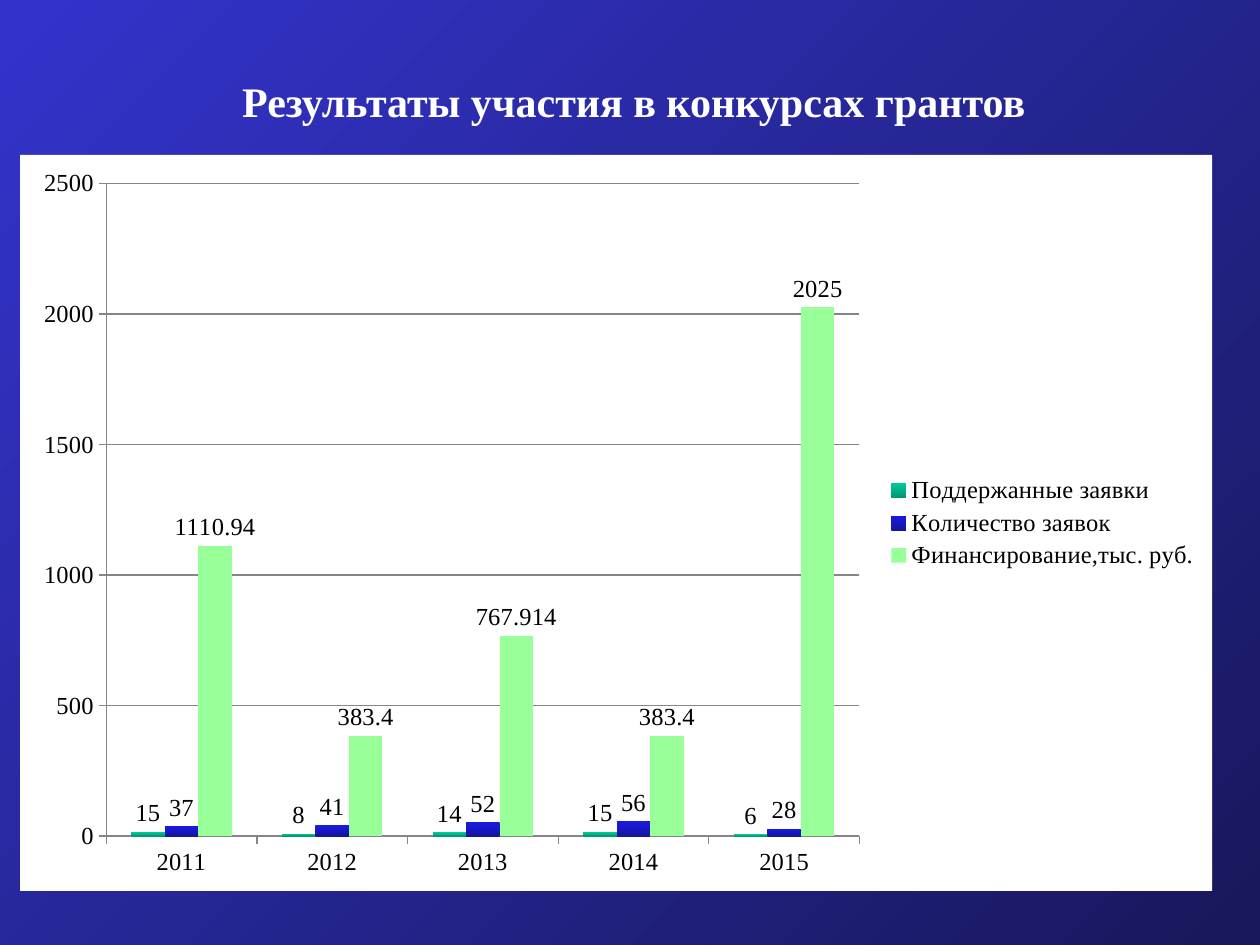
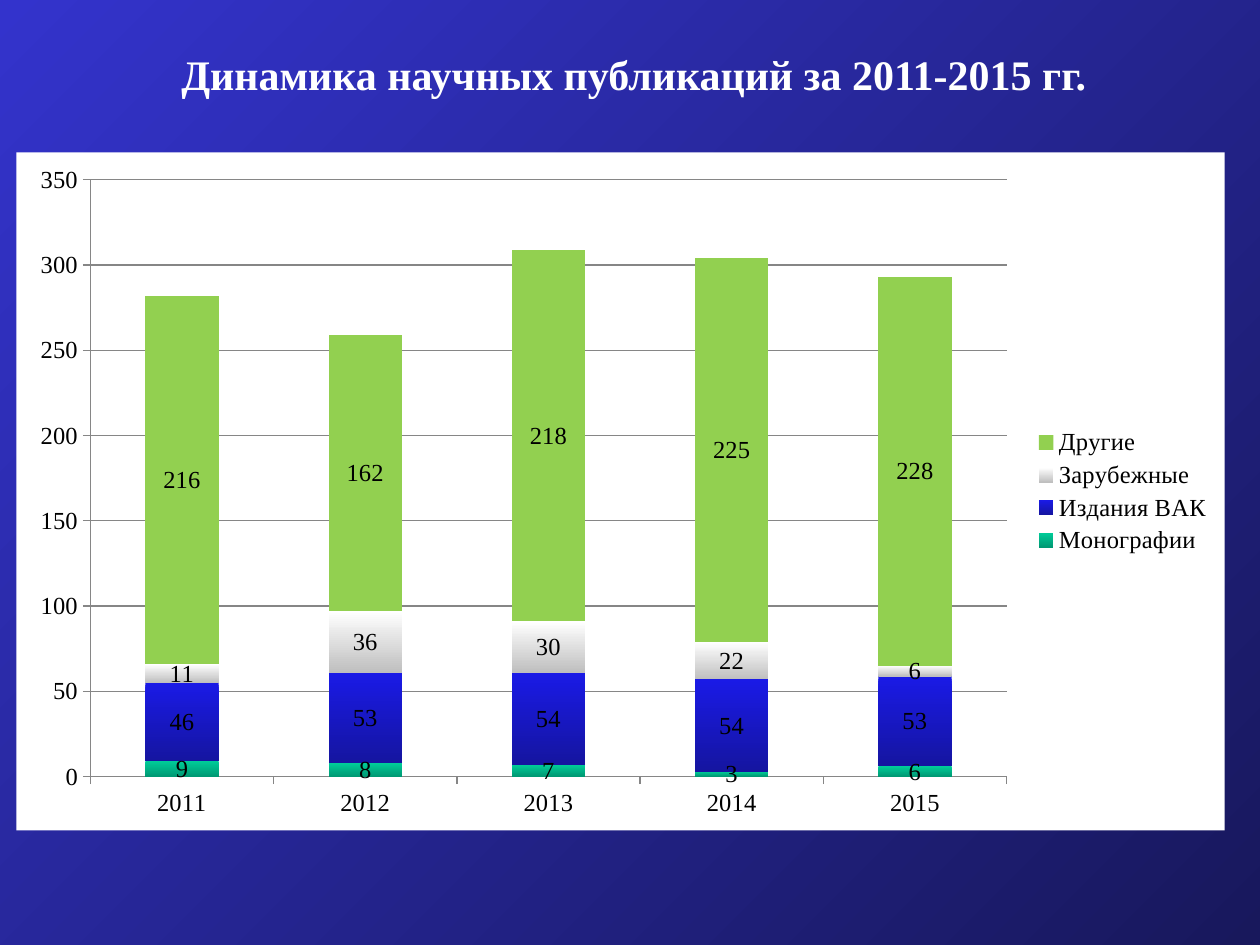
from lxml import etree
from pptx import Presentation
from pptx import util as u
from pptx.chart.data import CategoryChartData
from pptx.dml.color import RGBColor
from pptx.enum import chart as ch, text
from pptx.oxml.ns import qn

THEME = {
    "font": "Times New Roman",
    "title_size": u.Pt(24),
    "chart_size": u.Pt(14),
    "title": "FFFFFF",
    "text": "000000",
    "panel": "FFFFFF",
    "grid": "868686",
    "background": ("3333CC", "18185C"),
    "teal": ("00CC99", "009973"),
    "blue": ("1A1AE6", "1515A0"),
    "grey": ("FFFFFF", "BFBFBF"),
    "mint": ("99FF99",),
    "lime": ("92D050",),
}
YEARS = ["2011", "2012", "2013", "2014", "2015"]

SLIDES = [
    {
        "title": "Результаты участия в конкурсах грантов",
        "title_box": (0.78, 0.37, 8.5, 0.86),
        "chart_box": (0.16, 1.23, 9.46, 5.84),
        "kind": ch.XL_CHART_TYPE.COLUMN_CLUSTERED,
        "label_position": ch.XL_LABEL_POSITION.OUTSIDE_END,
        "overlap": 0,
        "series": [
            ("Поддержанные заявки", "teal", (15, 8, 14, 15, 6)),
            ("Количество заявок", "blue", (37, 41, 52, 56, 28)),
            ("Финансирование,тыс. руб.", "mint", (1110.94, 383.4, 767.914, 383.4, 2025)),
        ],
    },
    {
        "title": "Динамика научных публикаций за 2011-2015 гг.",
        "title_box": (0.78, 0.16, 8.5, 0.85),
        "chart_box": (0.13, 1.21, 9.59, 5.38),
        "kind": ch.XL_CHART_TYPE.COLUMN_STACKED,
        "label_position": ch.XL_LABEL_POSITION.CENTER,
        "overlap": 100,
        "series": [
            ("Монографии", "teal", (9, 8, 7, 3, 6)),
            ("Издания ВАК", "blue", (46, 53, 54, 54, 53)),
            ("Зарубежные", "grey", (11, 36, 30, 22, 6)),
            ("Другие", "lime", (216, 162, 218, 225, 228)),
        ],
    },
]


def set_all(target, values):
    for name, value in values.items():
        setattr(target, name, value)


def paint(fill, colours, angle=270):
    if len(colours) == 1:
        fill.solid()
        fill.fore_color.rgb = RGBColor.from_string(colours[0])
        return
    fill.gradient()
    fill.gradient_angle = angle
    for stop, colour in zip(fill.gradient_stops, colours):
        stop.color.rgb = RGBColor.from_string(colour)


deck = Presentation()
set_all(deck, {"slide_width": u.Inches(10), "slide_height": u.Inches(7.5)})
paint(deck.slide_master.background.fill, THEME["background"], angle=315)

for content in SLIDES:
    slide = deck.slides.add_slide(deck.slide_layouts[5])

    heading = slide.shapes.title
    set_all(heading, dict(zip(("left", "top", "width", "height"), map(u.Inches, content["title_box"]))))
    set_all(heading.text_frame, {
        "text": content["title"],
        "word_wrap": True,
        "vertical_anchor": text.MSO_ANCHOR.MIDDLE,
    })
    line = heading.text_frame.paragraphs[0]
    line.alignment = text.PP_ALIGN.CENTER
    title_font = line.runs[0].font
    set_all(title_font, {"name": THEME["font"], "size": THEME["title_size"], "bold": True})
    title_font.color.rgb = RGBColor.from_string(THEME["title"])

    results = CategoryChartData()
    results.categories = YEARS
    for name, colour, values in content["series"]:
        results.add_series(name, values)
    chart = slide.shapes.add_chart(
        content["kind"], *map(u.Inches, content["chart_box"]), results
    ).chart
    set_all(chart, {"has_title": False, "has_legend": True})
    set_all(chart.legend, {"position": ch.XL_LEGEND_POSITION.RIGHT, "include_in_layout": False})
    set_all(chart.font, {"name": THEME["font"], "size": THEME["chart_size"]})
    chart.font.color.rgb = RGBColor.from_string(THEME["text"])

    panel = etree.Element(qn("c:spPr"))
    panel_fill = etree.SubElement(panel, qn("a:solidFill"))
    etree.SubElement(panel_fill, qn("a:srgbClr"), val=THEME["panel"])
    etree.SubElement(etree.SubElement(panel, qn("a:ln")), qn("a:noFill"))
    chart.element.find(qn("c:txPr")).addprevious(panel)

    chart.value_axis.has_major_gridlines = True
    for axis in (chart.category_axis, chart.value_axis):
        set_all(axis, {
            "major_tick_mark": ch.XL_TICK_MARK.OUTSIDE,
            "minor_tick_mark": ch.XL_TICK_MARK.NONE,
        })
    for axis_part in (chart.category_axis, chart.value_axis, chart.value_axis.major_gridlines):
        axis_part.format.line.width = u.Pt(0.75)
        axis_part.format.line.color.rgb = RGBColor.from_string(THEME["grid"])

    plot = chart.plots[0]
    set_all(plot, {"gap_width": 150, "overlap": content["overlap"], "vary_by_categories": False})
    for columns, (name, colour, values) in zip(plot.series, content["series"]):
        paint(columns.format.fill, THEME[colour])
        columns.invert_if_negative = False
        set_all(columns.data_labels, {"show_value": True, "position": content["label_position"]})

deck.save("out.pptx")
